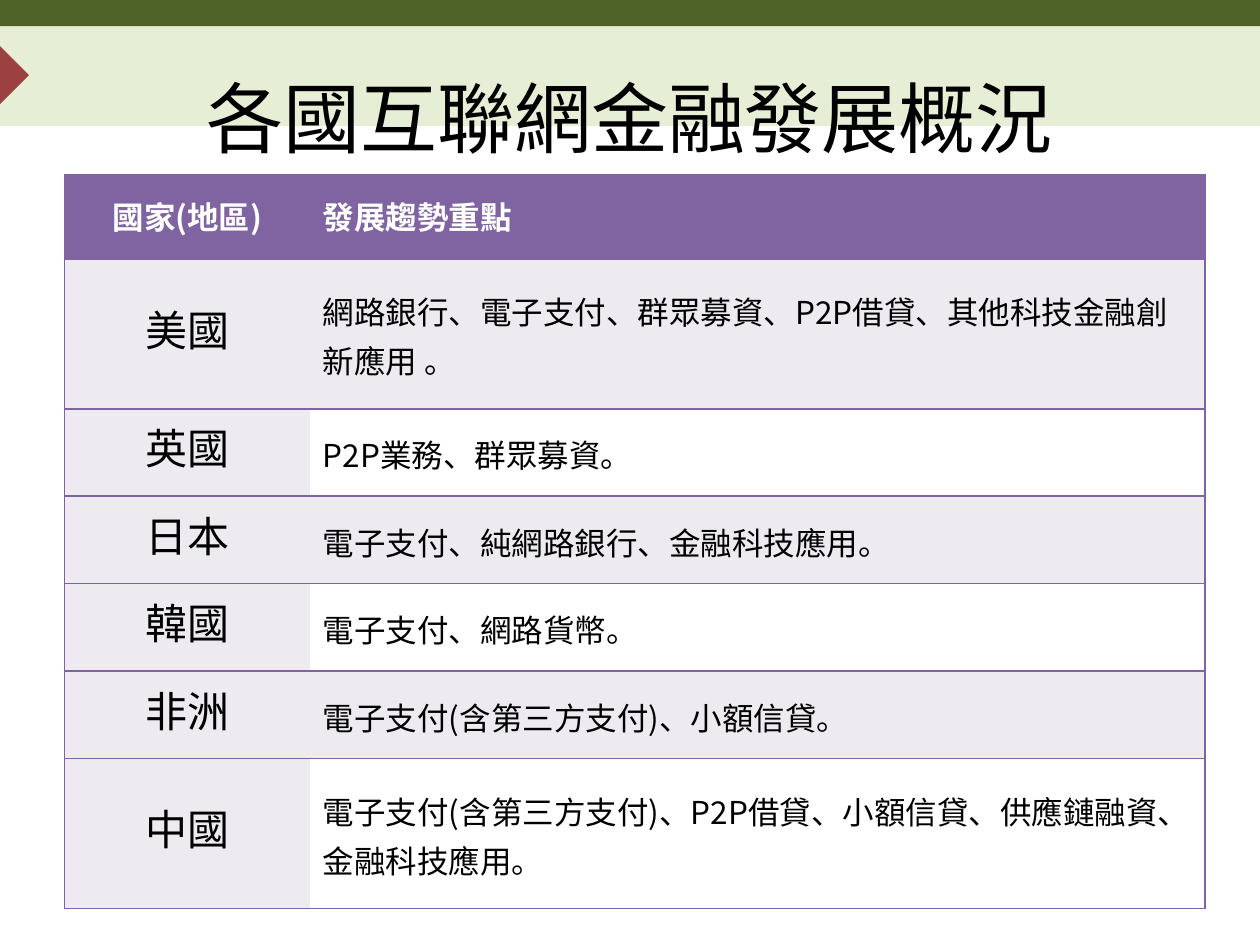
"""Build a slide with a table of internet finance trends by country or region."""
from lxml.etree import SubElement
from pptx import Presentation
from pptx.dml.color import RGBColor
from pptx.enum.shapes import MSO_SHAPE
from pptx.enum.text import MSO_ANCHOR, PP_ALIGN
from pptx.oxml import parse_xml
from pptx.oxml.ns import nsdecls, qn
from pptx.util import Pt

COLORS = {
    "band": "E6EFD5", "bar": "4F6228", "marker": "9C4042",
    "purple": "8064A2", "lilac": "EDEAF0", "white": "FFFFFF", "black": "000000",
}
FONT = "Noto Sans CJK SC"


def write(frame, text, size, color, bold=False, **paragraph_format):
    frame.vertical_anchor = MSO_ANCHOR.MIDDLE
    frame.word_wrap = True
    paragraph = frame.paragraphs[0]
    for name, value in paragraph_format.items():
        setattr(paragraph, name, value)
    run = paragraph.add_run()
    run.text = text
    for name, value in {"name": FONT, "size": Pt(size), "bold": bold}.items():
        setattr(run.font, name, value)
    run.font.color.rgb = RGBColor.from_string(COLORS[color])
    SubElement(run.font._element, qn("a:ea"), typeface=FONT)


def set_borders(cell, hidden_side):
    properties = cell._tc.get_or_add_tcPr()
    for position, side in enumerate("LRTB"):
        paint = "<a:noFill/>" if side == hidden_side else (
            f'<a:solidFill><a:srgbClr val="{COLORS["purple"]}"/></a:solidFill>')
        border = parse_xml(f'<a:ln{side} {nsdecls("a")} w="{Pt(1)}">{paint}</a:ln{side}>')
        properties.insert(position, border)


presentation = Presentation()
presentation.slide_width, presentation.slide_height = Pt(720), Pt(540)
slide = presentation.slides.add_slide(presentation.slide_layouts[6])

decorations = [
    ("band", 0, 15, 720.7, 56.9, 0),
    ("bar", 0, 0, 720.7, 15, 0),
    ("marker", -29.5, 23.8, 38.2, 38.2, 315),
]
for color, left, top, width, height, rotation in decorations:
    decoration = slide.shapes.add_shape(
        MSO_SHAPE.RECTANGLE, Pt(left), Pt(top), Pt(width), Pt(height))
    decoration.rotation = rotation
    decoration.shadow.inherit = False
    decoration.fill.solid()
    decoration.fill.fore_color.rgb = RGBColor.from_string(COLORS[color])
    decoration.line.fill.background()

trends = [
    ("國家(地區)", "發展趨勢重點", 48),
    ("美國", "網路銀行、電子支付、群眾募資、P2P借貸、其他科技金融創新應用 。", 85.6),
    ("英國", "P2P業務、群眾募資。", 50),
    ("日本", "電子支付、純網路銀行、金融科技應用。", 50),
    ("韓國", "電子支付、網路貨幣。", 50),
    ("非洲", "電子支付(含第三方支付)、小額信貸。", 50),
    ("中國", "電子支付(含第三方支付)、P2P借貸、小額信貸、供應鏈融資、金融科技應用。", 85.6),
]
column_widths = [140.4, 511.2]
total_height = sum(height for _, _, height in trends)
trend_table = slide.shapes.add_table(
    len(trends), 2, Pt(36.9), Pt(100), Pt(sum(column_widths)), Pt(total_height)).table
for column, width in zip(trend_table.columns, column_widths):
    column.width = Pt(width)

header_format = {"line_spacing": Pt(25), "space_after": Pt(10)}
body_format = {"line_spacing": Pt(28)}
for row, (country, focus, height) in enumerate(trends):
    trend_table.rows[row].height = Pt(height)
    is_header = row == 0
    row_format = header_format if is_header else body_format
    for column, text in enumerate((country, focus)):
        is_country = column == 0
        cell = trend_table.cell(row, column)
        shade = "purple" if is_header else "lilac" if is_country or row % 2 else "white"
        cell.fill.solid()
        cell.fill.fore_color.rgb = RGBColor.from_string(COLORS[shade])
        set_borders(cell, "R" if is_country else "L")
        cell.vertical_anchor = MSO_ANCHOR.MIDDLE
        write(cell.text_frame, text,
              24 if is_country and not is_header else 18,
              "white" if is_header else "black", is_header,
              alignment=PP_ALIGN.CENTER if is_country else PP_ALIGN.LEFT, **row_format)

title = slide.shapes.add_textbox(Pt(36), Pt(21.6), Pt(648), Pt(90))
write(title.text_frame, "各國互聯網金融發展概況", 44, "black", alignment=PP_ALIGN.CENTER)

presentation.save("out.pptx")
